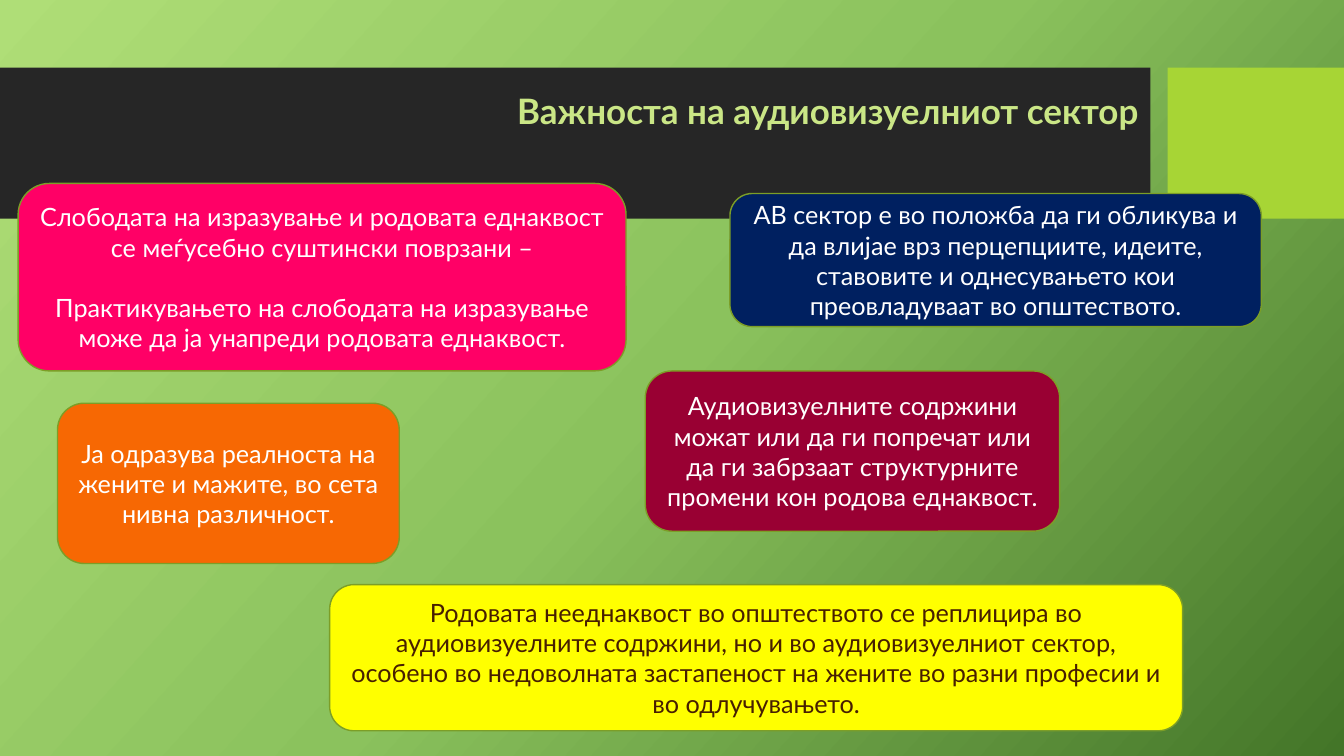
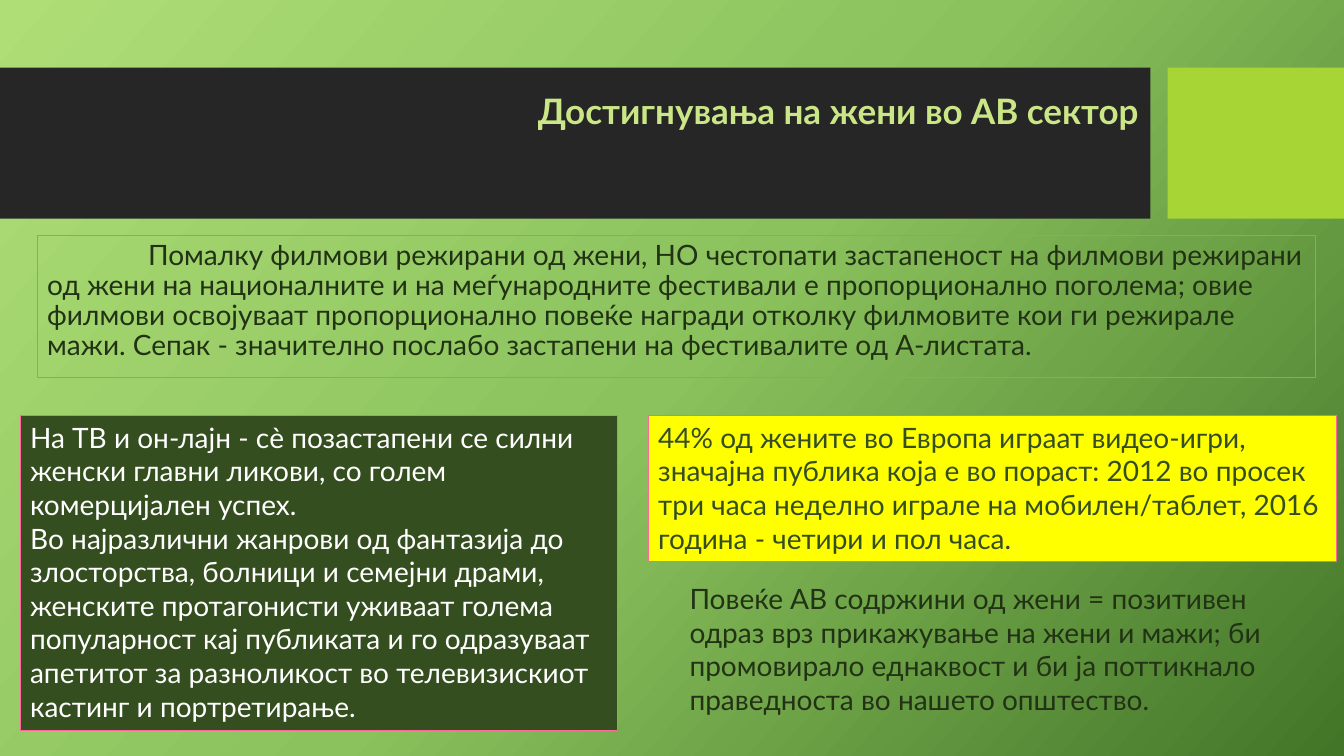
from copy import deepcopy
from dataclasses import dataclass
from pptx import Presentation
from pptx.dml.color import RGBColor
from pptx.enum.shapes import MSO_SHAPE
from pptx.enum.text import MSO_ANCHOR, MSO_AUTO_SIZE, PP_ALIGN
from pptx.oxml.ns import qn
from pptx.util import Inches, Pt


@dataclass(frozen=True)
class Theme:
    font: str = "Lato"
    head: int = 25
    card: int = 18
    body: int = 20
    lime: str = "CAE686"
    band: str = "262626"
    tab: str = "A7D535"
    edge: str = "7C9E27"
    faint: str = "7DB552"
    rose: str = "FF6699"
    pink: str = "FF0066"
    navy: str = "002060"
    amber: str = "F76803"
    wine: str = "990033"
    sun: str = "FFFF00"
    moss: str = "354E20"
    ink: str = "223214"
    brown: str = "471F01"
    white: str = "FFFFFF"
    back: tuple = ((0, "AFDE77"), (0.5, "8BC25D"), (1, "437528"))


@dataclass(frozen=True)
class Box:
    left: float
    top: float
    width: float
    height: float

    def sub(self, left, top, width, height):
        return Box(self.left + left, self.top + top, width, height)

    def spot(self):
        return [Inches(v) for v in (self.left, self.top, self.width, self.height)]


T = Theme()
HEAD = Box(0, 0.67, 13.33, 1.5)
CARDS = Box(0.18, 1.82, 12.97, 5.43)
PANELS = Box(0.2, 2.34, 13.06, 4.91)


def style(frame, size, color, align, bold=False):
    frame.word_wrap = True
    for par in frame.paragraphs:
        par.alignment = align
        for run in par.runs:
            font = run.font
            font.name, font.size, font.bold = T.font, Pt(size), bold
            font.color.rgb = RGBColor.from_string(color)


def block(slide, box, kind, fill=None, edge=None, width=1):
    shape = slide.shapes.add_shape(kind, *box.spot())
    shape.shadow.inherit = False
    if fill:
        shape.fill.solid()
        shape.fill.fore_color.rgb = RGBColor.from_string(fill)
    else:
        shape.fill.background()
    if edge:
        shape.line.color.rgb = RGBColor.from_string(edge)
        shape.line.width = Pt(width)
    else:
        shape.line.fill.background()
    return shape


def paint(master):
    fill = master.background.fill
    fill.gradient()
    fill.gradient_angle = 318
    stops = master.element.find(".//" + qn("a:gsLst"))
    stops.insert(0, deepcopy(stops[0]))
    for stop, (place, color) in zip(fill.gradient_stops, T.back):
        stop.position = place
        stop.color.rgb = RGBColor.from_string(color)


def bands(slide, box):
    tree = slide.slide_layout.shapes.element
    for left, width, fill in ((0, 11.41, T.band), (11.58, 1.75, T.tab)):
        part = box.sub(left, 0, width, box.height)
        band = block(slide, part, MSO_SHAPE.RECTANGLE, fill)
        tree.append(band.element)


def title(slide, box, text):
    head = slide.shapes.title
    head.left, head.top, head.width, head.height = box.sub(0.88, 0.07, 10.51, 0.77).spot()
    frame = head.text_frame
    frame.text = text
    frame.auto_size = MSO_AUTO_SIZE.NONE
    frame.vertical_anchor = MSO_ANCHOR.MIDDLE
    frame.paragraphs[0].line_spacing = 0.9
    style(frame, T.head, T.lime, PP_ALIGN.RIGHT, True)


def cards(slide, box, items):
    for place, fill, color, text in items:
        shape = block(slide, box.sub(*place), MSO_SHAPE.ROUNDED_RECTANGLE, fill, T.edge)
        frame = shape.text_frame
        frame.text = text
        frame.vertical_anchor = MSO_ANCHOR.MIDDLE
        for par in frame.paragraphs[1:]:
            par.space_before = Pt(T.card * 1.2)
        style(frame, T.card, color, PP_ALIGN.CENTER)


def panels(slide, box, items):
    for place, fill, edge, color, text in items:
        shape = block(slide, box.sub(*place), MSO_SHAPE.RECTANGLE, fill, edge, 0.75)
        frame = shape.text_frame
        frame.text = text
        frame.vertical_anchor = MSO_ANCHOR.TOP
        style(frame, T.body, color, PP_ALIGN.LEFT)
        if edge == T.faint:
            par = frame.paragraphs[0]
            par.line_spacing = 0.9
            par._p.get_or_add_pPr().set("indent", str(Inches(1)))


SECTOR = (
    ((0, 0, 6.03, 1.86), T.pink, T.white,
     "Слободата на изразување и родовата еднаквост се меѓусебно суштински поврзани –\n"
     "Практикувањето на слободата на изразување може да ја унапреди родовата еднаквост."),
    ((7.06, 0.1, 5.27, 1.32), T.navy, T.white,
     "АВ сектор е во положба да ги обликува и да влијае врз перцепциите, идеите, "
     "ставовите и однесувањето кои преовладуваат во општеството."),
    ((0.39, 2.18, 3.39, 1.59), T.amber, T.white,
     "Ја одразува реалноста на жените и мажите, во сета нивна различност."),
    ((6.22, 1.86, 4.11, 1.59), T.wine, T.white,
     "Аудиовизуелните содржини можат или да ги попречат или да ги забрзаат "
     "структурните промени кон родова еднаквост."),
    ((3.09, 3.98, 8.46, 1.45), T.sun, T.brown,
     "Родовата нееднаквост во општеството се реплицира во аудиовизуелните содржини, "
     "но и во аудиовизуелниот сектор, особено во недоволната застапеност на жените "
     "во разни професии и во одлучувањето."),
)

WOMEN = (
    ((0.17, 0, 12.68, 1.41), None, T.faint, T.ink,
     "Помалку филмови режирани од жени, НО честопати застапеност на филмови режирани "
     "од жени на националните и на меѓународните фестивали е пропорционално поголема; "
     "овие филмови освојуваат пропорционално повеќе награди отколку филмовите кои ги "
     "режирале мажи. Сепак - значително послабо застапени на фестивалите од А-листата."),
    ((0, 1.78, 5.93, 3.13), T.moss, T.rose, T.white,
     "На ТВ и он-лајн - сè позастапени се силни женски главни ликови, со голем "
     "комерцијален успех.\n"
     "Вo најразлични жанрови од фантазија до злосторства, болници и семејни драми, "
     "женските протагонисти уживаат голема популарност кај публиката и го одразуваат "
     "апетитот за разноликост во телевизискиот кастинг и портретирање."),
    ((6.23, 1.78, 6.83, 1.45), T.sun, T.rose, T.moss,
     "44% од жените во Европа играат видео-игри, значајна публика која е во пораст: "
     "2012 во просек три часа неделно играле на мобилен/таблет, 2016 година - четири "
     "и пол часа."),
    ((6.54, 3.38, 6.11, 1.45), None, None, T.ink,
     "Повеќе АВ содржини од жени = позитивен одраз врз прикажување на жени и мажи; "
     "би промовирало еднаквост и би ја поттикнало праведноста во нашето општество."),
)


def main():
    deck = Presentation()
    deck.slide_width, deck.slide_height = Inches(13.33), Inches(7.5)
    paint(deck.slide_master)
    layout = deck.slide_layouts[5]

    first = deck.slides.add_slide(layout)
    bands(first, HEAD)
    title(first, HEAD, "Важноста на аудиовизуелниот сектор")
    cards(first, CARDS, SECTOR)

    second = deck.slides.add_slide(layout)
    title(second, HEAD, "Достигнувања на жени во АВ сектор")
    panels(second, PANELS, WOMEN)
    deck.save("out.pptx")


if __name__ == "__main__":
    main()
